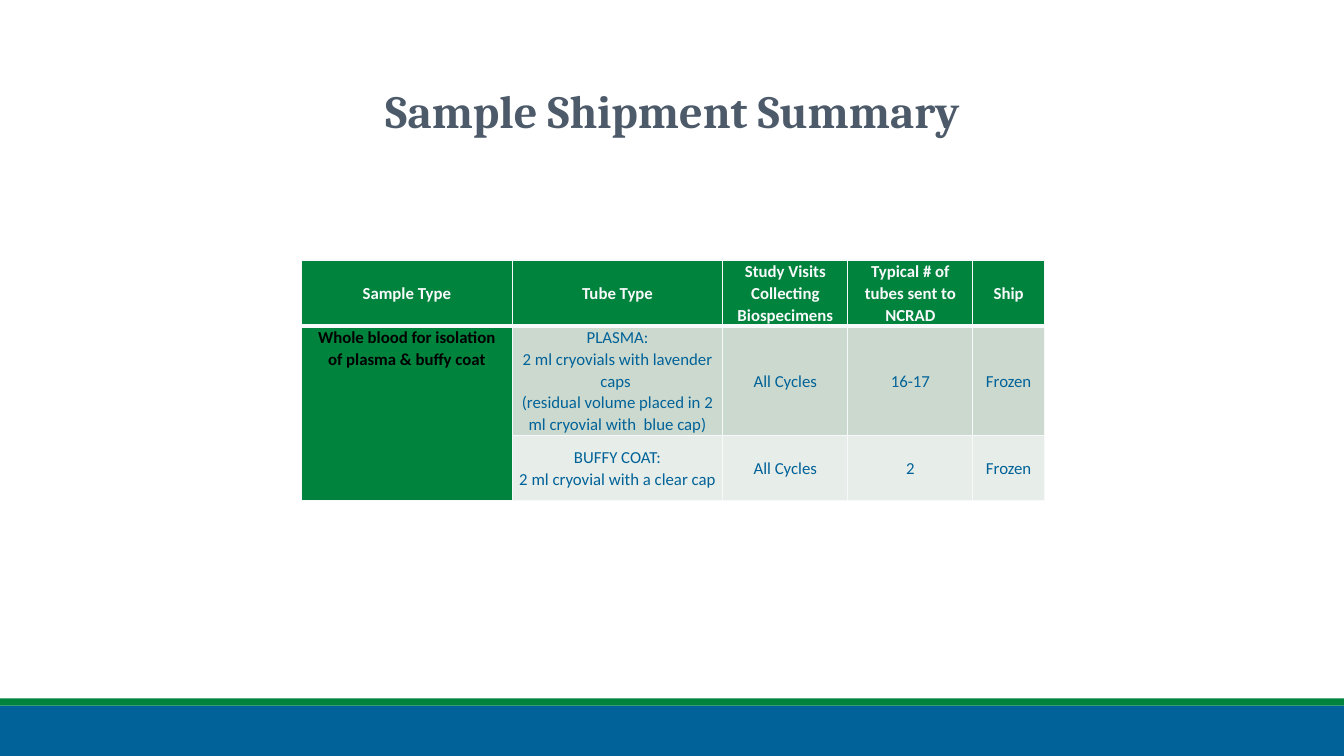
from lxml.etree import SubElement
from pptx import Presentation
from pptx.dml.color import RGBColor
from pptx.enum.shapes import MSO_SHAPE
from pptx.enum.text import MSO_ANCHOR, MSO_AUTO_SIZE, PP_ALIGN
from pptx.oxml.ns import qn
from pptx.util import Inches, Pt

BLUE = RGBColor(0x00, 0x62, 0x98)
GREEN = RGBColor(0x00, 0x84, 0x3D)
SLATE = RGBColor(0x4D, 0x5A, 0x69)
BLACK = RGBColor(0x00, 0x00, 0x00)
OFF_WHITE = RGBColor(0xF8, 0xF9, 0xFA)
BAND_DARK = RGBColor(0xCC, 0xD9, 0xCE)
BAND_LIGHT = RGBColor(0xE7, 0xED, 0xE8)

COLUMN_WIDTHS = [2.09, 2.09, 1.24, 1.24, 0.71]
ROW_HEIGHTS = [0.38, 0.8, 0.65]
ROW_FILLS = [GREEN, BAND_DARK, BAND_LIGHT]

# Each cell is a list of paragraphs
SHIPMENTS = [
    [["Sample Type"], ["Tube Type"], ["Study Visits Collecting Biospecimens"],
     ["Typical # of tubes sent to NCRAD"], ["Ship"]],
    [["Whole blood for isolation of plasma & buffy coat"],
     ["PLASMA:", "2 ml cryovials with lavender caps ",
      "(residual volume placed in 2 ml cryovial with  blue cap)"],
     ["All Cycles"], ["16-17"], ["Frozen"]],
    [[], ["BUFFY COAT:", "2 ml cryovial with a clear cap"],
     ["All Cycles"], ["2"], ["Frozen"]],
]


def add_text(para, text, font, size, color, bold, spacing):
    para.alignment = PP_ALIGN.CENTER
    para.line_spacing = spacing
    span = para.add_run()
    span.text = text
    span.font.name = font
    span.font.size = Pt(size)
    span.font.color.rgb = color
    span.font.bold = bold


def add_bar(page, top, height, color):
    bar = page.shapes.add_shape(MSO_SHAPE.RECTANGLE, 0, Inches(top),
                                Inches(13.33), Inches(height))
    bar.shadow.inherit = False
    bar.fill.solid()
    bar.fill.fore_color.rgb = color
    bar.line.fill.background()


def add_title(page, text):
    title = page.shapes.title
    title.left, title.top = Inches(0.92), Inches(0.4)
    title.width, title.height = Inches(11.5), Inches(1.45)
    frame = title.text_frame
    frame.auto_size = MSO_AUTO_SIZE.NONE
    frame.vertical_anchor = MSO_ANCHOR.MIDDLE
    add_text(frame.paragraphs[0], text, "Cambria", 33, SLATE, True, 0.9)


def set_borders(cell, top, bottom):
    properties = cell._tc.get_or_add_tcPr()
    widths = {"a:lnL": 1, "a:lnR": 1, "a:lnT": top, "a:lnB": bottom}
    for place, (tag, width) in enumerate(widths.items()):
        line = SubElement(properties, qn(tag), w=str(Pt(width)))
        fill = SubElement(line, qn("a:solidFill"))
        SubElement(fill, qn("a:srgbClr"), val=str(OFF_WHITE))
        properties.insert(place, line)


def fill_cell(cell, lines, fill, color, bold, margin, anchor):
    cell.fill.solid()
    cell.fill.fore_color.rgb = fill
    cell.margin_left = cell.margin_right = Inches(margin)
    cell.margin_top = cell.margin_bottom = 0
    cell.vertical_anchor = anchor
    frame = cell.text_frame
    for index, text in enumerate(lines):
        para = frame.add_paragraph() if index else frame.paragraphs[0]
        add_text(para, text, "Calibri", 12, color, bold, 1.07)


def add_shipment_table(page):
    table = page.shapes.add_table(
        len(ROW_HEIGHTS), len(COLUMN_WIDTHS), Inches(2.99), Inches(2.58),
        Inches(sum(COLUMN_WIDTHS)), Inches(sum(ROW_HEIGHTS))).table
    for column, width in zip(table.columns, COLUMN_WIDTHS):
        column.width = Inches(width)
    for row, height in zip(table.rows, ROW_HEIGHTS):
        row.height = Inches(height)

    for r, row in enumerate(SHIPMENTS):
        for c, lines in enumerate(row):
            cell = table.cell(r, c)
            if r == 0:
                fill_cell(cell, lines, GREEN, OFF_WHITE, True, 0.07,
                          MSO_ANCHOR.MIDDLE)
            elif c == 0:
                fill_cell(cell, lines, GREEN, BLACK, True, 0.12,
                          MSO_ANCHOR.TOP)
            else:
                fill_cell(cell, lines, ROW_FILLS[r], BLUE, False, 0.07,
                          MSO_ANCHOR.MIDDLE)
            # Thick rule between the header and the body
            set_borders(cell, 3 if r == 1 else 1, 3 if r == 0 else 1)
    table.cell(1, 0).merge(table.cell(2, 0))


def main():
    deck = Presentation()
    deck.slide_width, deck.slide_height = Inches(13.33), Inches(7.5)
    page = deck.slides.add_slide(deck.slide_layouts[5])

    # Footer bars
    add_bar(page, 7, 0.5, BLUE)
    add_bar(page, 6.93, 0.07, GREEN)

    # Content
    add_title(page, "Sample Shipment Summary")
    add_shipment_table(page)
    deck.save("out.pptx")


if __name__ == "__main__":
    main()
